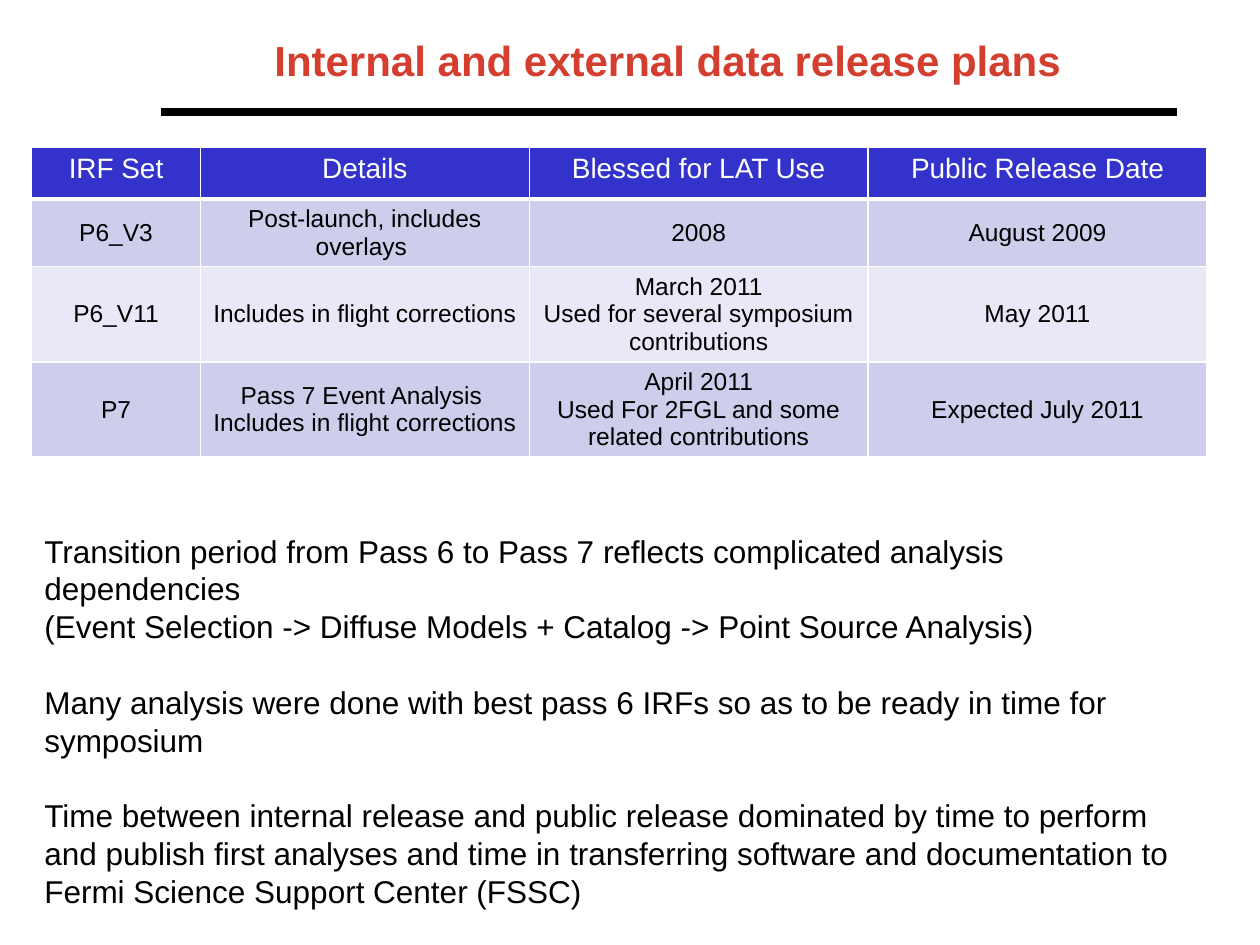
from dataclasses import dataclass

from lxml.etree import SubElement
from pptx import Presentation
from pptx.dml.color import RGBColor
from pptx.enum.shapes import MSO_CONNECTOR
from pptx.enum.text import MSO_ANCHOR, MSO_AUTO_SIZE, PP_ALIGN
from pptx.oxml.ns import qn
from pptx.util import Cm, Pt


@dataclass(frozen=True)
class Theme:
    font: str = "Arial"
    title: str = "D43E2E"
    text: str = "000000"
    white: str = "FFFFFF"
    header: str = "3333CC"
    bands: tuple = ("CECEEC", "E8E8F6")
    title_size: int = 24
    body_size: int = 18
    header_size: int = 16
    cell_size: int = 14
    line_pitch: float = 21.6


THEME = Theme()
TITLE = "Internal and external data release plans"
COLUMN_WIDTHS = (3.4, 6.63, 6.83, 6.83)
ROW_HEIGHT = 1.04
TABLE_ROWS = (
    ("IRF Set", "Details", "Blessed for LAT Use", "Public Release Date"),
    ("P6_V3", "Post-launch, includes overlays ", "2008", "August 2009"),
    ("P6_V11", "Includes in flight corrections",
     "March 2011\nUsed for several symposium contributions", "May 2011"),
    ("P7", "Pass 7 Event Analysis \nIncludes in flight corrections",
     "April 2011\nUsed For 2FGL and some related contributions",
     "Expected July 2011"),
)
# Each group of paragraphs is set apart by one line of space
BODY_GROUPS = (
    ("Transition period from Pass 6 to Pass 7 reflects complicated analysis dependencies",
     "(Event Selection -> Diffuse Models + Catalog -> Point Source Analysis)"),
    ("Many analysis were done with best pass 6 IRFs so as to be ready in time for",
     "symposium"),
    ("Time between internal release and public release dominated by time to perform "
     "and publish first analyses and time in transferring software and documentation "
     "to Fermi Science Support Center (FSSC)",),
)


def apply(target, values):
    for name, value in values.items():
        setattr(target, name, value)


def style_font(font, size, color, bold=False):
    apply(font, {"name": THEME.font, "size": Pt(size), "bold": bold})
    font.color.rgb = RGBColor.from_string(color)


def place(shape, left, top, width, height):
    apply(shape, {"left": Cm(left), "top": Cm(top),
                  "width": Cm(width), "height": Cm(height)})


def fill_title(box):
    place(box, 3.15, 0.28, 20.62, 1.83)
    frame = box.text_frame
    apply(frame, {"text": TITLE, "vertical_anchor": MSO_ANCHOR.MIDDLE,
                  "auto_size": MSO_AUTO_SIZE.NONE, "word_wrap": True})
    para = frame.paragraphs[0]
    para.alignment = PP_ALIGN.CENTER
    style_font(para.font, THEME.title_size, THEME.title, bold=True)


def add_rule(slide):
    rule = slide.shapes.add_connector(
        MSO_CONNECTOR.STRAIGHT, Cm(3.25), Cm(2.26), Cm(23.72), Cm(2.26))
    rule.line.width = Pt(4.5)
    rule.line.color.rgb = RGBColor.from_string(THEME.text)
    SubElement(rule.element.spPr, qn("a:effectLst"))


def add_borders(cell, widths):
    properties = cell._tc.get_or_add_tcPr()
    for side, width in widths.items():
        border = SubElement(properties, qn(f"a:ln{side}"), w=str(Pt(width)))
        fill = SubElement(border, qn("a:solidFill"))
        SubElement(fill, qn("a:srgbClr"), val=THEME.white)


def format_cell(cell, text, row):
    header = row == 0
    cell.text = text
    cell.vertical_anchor = MSO_ANCHOR.TOP if header else MSO_ANCHOR.MIDDLE
    # The line under the header is heavier than the rest of the grid
    add_borders(cell, {"L": 1, "R": 1, "T": 3 if row == 1 else 1,
                       "B": 3 if header else 1})
    color = THEME.header if header else THEME.bands[(row - 1) % 2]
    cell.fill.solid()
    cell.fill.fore_color.rgb = RGBColor.from_string(color)
    size = THEME.header_size if header else THEME.cell_size
    for para in cell.text_frame.paragraphs:
        para.alignment = PP_ALIGN.CENTER
        for span in para.runs:
            style_font(span.font, size, THEME.white if header else THEME.text)


def add_release_table(slide):
    table = slide.shapes.add_table(
        len(TABLE_ROWS), len(COLUMN_WIDTHS), Cm(0.64), Cm(2.97),
        Cm(sum(COLUMN_WIDTHS)), Cm(ROW_HEIGHT * len(TABLE_ROWS))).table
    for column, width in zip(table.columns, COLUMN_WIDTHS):
        column.width = Cm(width)
    for row, texts in enumerate(TABLE_ROWS):
        table.rows[row].height = Cm(ROW_HEIGHT)
        for column, text in enumerate(texts):
            format_cell(table.cell(row, column), text, row)


def fill_body(box):
    place(box, 0.64, 10.59, 23.7, 8.71)
    frame = box.text_frame
    apply(frame, {"text": "\n".join(text for group in BODY_GROUPS for text in group),
                  "vertical_anchor": MSO_ANCHOR.TOP,
                  "auto_size": MSO_AUTO_SIZE.NONE, "word_wrap": True})
    group_starts = {group[0] for group in BODY_GROUPS[1:]}
    for para in frame.paragraphs:
        properties = para._p.get_or_add_pPr()
        properties.set("marL", "0")
        properties.set("indent", "0")
        SubElement(properties, qn("a:buNone"))
        gap = THEME.line_pitch if para.text in group_starts else 0
        apply(para, {"alignment": PP_ALIGN.LEFT, "space_before": Pt(gap),
                     "space_after": Pt(0), "line_spacing": Pt(THEME.line_pitch)})
        style_font(para.font, THEME.body_size, THEME.text)


def main():
    deck = Presentation()
    apply(deck, {"slide_width": Cm(25.4), "slide_height": Cm(19.05)})
    slide = deck.slides.add_slide(deck.slide_layouts[1])

    # Heading
    add_rule(slide)
    fill_title(slide.shapes.title)

    # Release dates and remarks
    add_release_table(slide)
    fill_body(slide.placeholders[1])

    deck.save("out.pptx")


if __name__ == "__main__":
    main()
